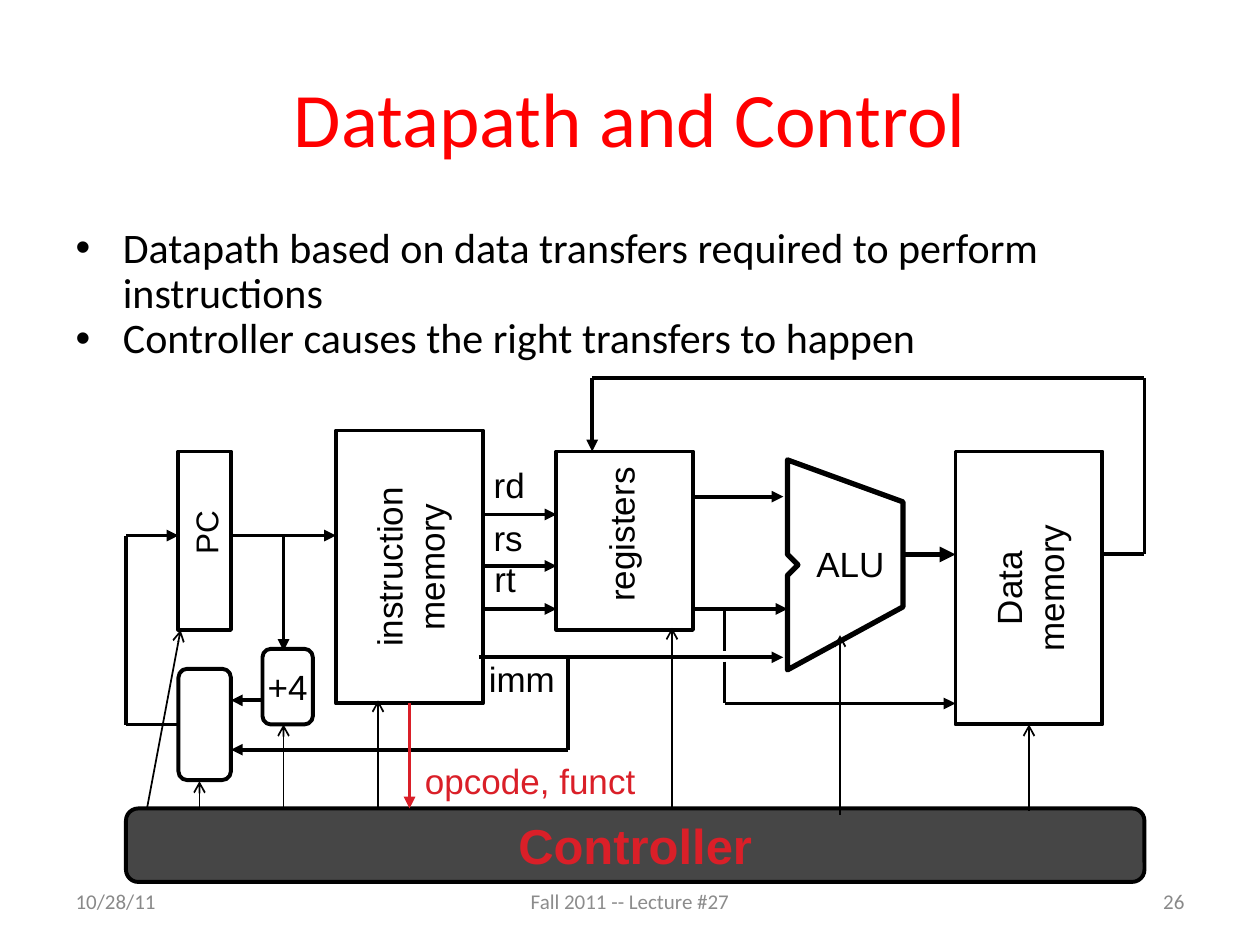
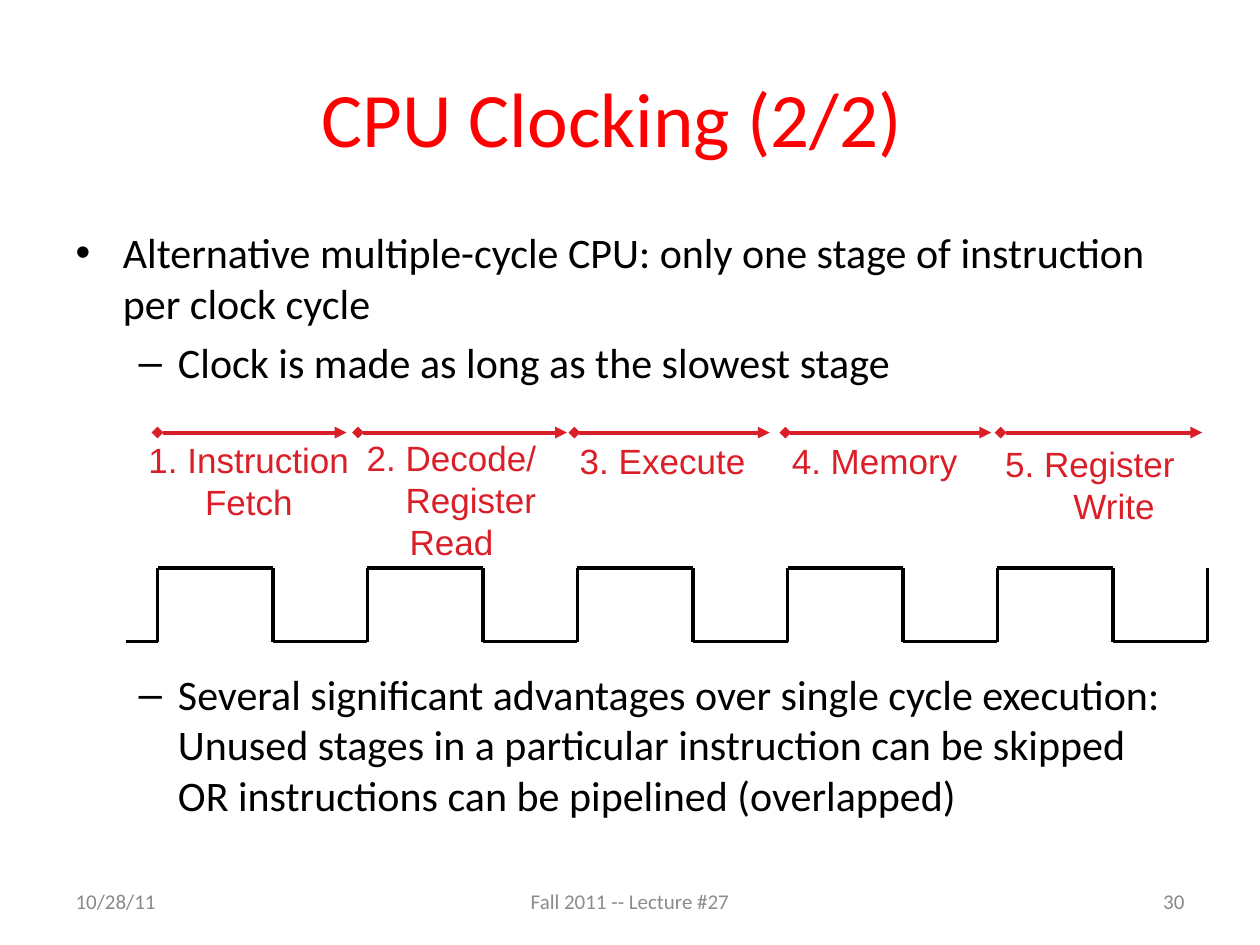
"""Builds two lecture slides: a processor datapath and a multiple-cycle clock."""
from lxml import etree
from pptx import Presentation, util as u
from pptx.dml.color import RGBColor
from pptx.enum import shapes, text
from pptx.oxml import ns

PX = 7620
BLACK, WHITE, RED, TITLE_RED = "000000", "FFFFFF", "DA1F28", "FF0000"
CHARCOAL, GREY, FOOTER_GREY = "464646", "898989", "8C8C8C"
RECT, ROUND = shapes.MSO_SHAPE.RECTANGLE, shapes.MSO_SHAPE.ROUNDED_RECTANGLE
LEFT, CENTER, RIGHT = text.PP_ALIGN.LEFT, text.PP_ALIGN.CENTER, text.PP_ALIGN.RIGHT

LECTURE, DATE = "Fall 2011 -- Lecture #27", "10/28/11"

DATAPATH_POINTS = [
    (0, "Datapath based on data transfers required to perform instructions", 0),
    (0, "Controller causes the right transfers to happen", 0),
]
CLOCKING_POINTS = [
    (0, "Alternative multiple-cycle CPU: only one stage of instruction per clock cycle", 0),
    (1, "Clock is made as long as the slowest stage", 5),
    (1, "Several significant advantages over single cycle execution: Unused stages in a "
        "particular instruction can be skipped OR instructions can be pipelined (overlapped)", 161),
]

UNITS = [
    (RECT, (170, 430, 50, 170), []),
    (RECT, (320, 410, 140, 260), ["instruction", "memory"]),
    (RECT, (530, 430, 130, 170), []),
    (RECT, (910, 430, 140, 260), ["Data", "memory"]),
    (ROUND, (250, 618, 48, 72), ["+4"]),
    (ROUND, (170, 637, 50, 106), []),
]
CONTROLLER = (120, 770, 970, 70)
ALU = [(750, 438), (860, 478), (860, 578), (750, 638), (750, 548), (760, 538), (750, 528)]

UNIT_LABELS = [
    ("rd", (485, 461), (54, 52), BLACK),
    ("rs", (484, 512), (52, 52), BLACK),
    ("rt", (481, 551), (44, 52), BLACK),
    ("imm", (497, 646), (88, 52), BLACK),
    ("ALU", (810, 537), (89, 52), BLACK),
    ("opcode, funct", (505, 743), (224, 52), RED),
]
UPRIGHT_LABELS = [
    ("PC", (196, 507), (48, 66), 18),
    ("registers", (591, 509), (52, 152), 20),
]

ARROW_WIRES = [
    [(220, 510), (320, 510)],
    [(270, 510), (270, 620)],
    [(460, 490), (530, 490)],
    [(460, 539), (530, 539)],
    [(460, 580), (530, 580)],
    [(660, 473), (746, 473)],
    [(660, 580), (750, 580)],
    [(456, 626), (746, 626)],
    [(250, 667), (220, 667)],
    [(541, 626), (541, 714), (220, 714)],
    [(690, 630), (690, 670), (910, 670)],
    [(170, 690), (120, 690), (120, 510), (170, 510)],
    [(1050, 528), (1090, 528), (1090, 360), (564, 360), (564, 430)],
]
ALU_RESULT = [(860, 528), (910, 528)]
STORE_STUB = [(690, 580), (690, 620)]
OPCODE_WIRE = [(390, 670), (390, 770)]
CONTROL_SIGNALS = [
    [(190, 770), (190, 744)],
    [(140, 770), (172, 600)],
    [(270, 770), (270, 690)],
    [(360, 770), (360, 667)],
    [(640, 770), (640, 598)],
    [(800, 776), (800, 605)],
    [(980, 772), (980, 690)],
]

STAGE_Y = 412
STAGES = [
    ((150, 330), (237, 458), ["1. Instruction", "Fetch"], 0),
    ((341, 540), (430, 476), ["2. Decode/", "Register", "Read"], 37),
    ((547, 733), (631, 439), ["3. Execute"], 0),
    ((748, 944), (833, 439), ["4. Memory"], 0),
    ((953, 1145), (1038, 461), ["5. Register", "Write"], 46),
]
CLOCK_START, FIRST_RISE, PERIOD, HIGH_TIME = 120, 150, 200, 110
CLOCK_HIGH, CLOCK_LOW = 541, 611


def px(*lengths):
    """Turn pixel lengths into EMU."""
    return [u.Emu(round(length * PX)) for length in lengths]


def rgb(code):
    """Turn a hex string into a colour."""
    return RGBColor.from_string(code)


def style(paragraph, font, size, color, align, bold=False):
    """Set the look of a whole paragraph."""
    paragraph.alignment = align
    paragraph.font.name, paragraph.font.size = font, u.Pt(size)
    paragraph.font.bold, paragraph.font.color.rgb = bold, rgb(color)


def write(shape, lines, size=20, color=BLACK, font="Arial", align=CENTER,
          bold=False, upright=False, second_indent=0):
    """Fill a shape with vertically centred lines, optionally turned a quarter left."""
    frame = shape.text_frame
    frame.word_wrap, frame.vertical_anchor = True, text.MSO_ANCHOR.MIDDLE
    frame.margin_left = frame.margin_right = frame.margin_top = frame.margin_bottom = 0
    if upright:
        frame._txBody.bodyPr.set("vert", "vert270")
    for index, line in enumerate(lines):
        paragraph = frame.add_paragraph() if index else frame.paragraphs[0]
        paragraph.text = line
        style(paragraph, font, size, color, align, bold)
        if index == 1 and second_indent:
            paragraph._p.get_or_add_pPr().set("marL", str(second_indent * PX))


def label(slide, lines, center, extent, **look):
    """Place a text box around a centre point."""
    (x, y), (width, height) = center, extent
    box = slide.shapes.add_textbox(*px(x - width / 2, y - height / 2, width, height))
    write(box, lines, **look)


def outline(shape, fill, weight=2.25):
    """Give a shape its fill and black border."""
    shape.shadow.inherit = False
    shape.fill.solid()
    shape.fill.fore_color.rgb = rgb(fill)
    shape.line.color.rgb, shape.line.width = rgb(BLACK), u.Pt(weight)


def block(slide, kind, frame, fill=WHITE):
    """Draw one hardware unit."""
    unit = slide.shapes.add_shape(kind, *px(*frame))
    outline(unit, fill)
    return unit


def side_at(units, point):
    """Find the unit and side whose middle lies at a point."""
    for unit in units:
        x, y, w, h = unit.left, unit.top, unit.width, unit.height
        middles = [(x + w // 2, y), (x, y + h // 2), (x + w // 2, y + h), (x + w, y + h // 2)]
        if point in middles:
            return unit, middles.index(point)
    return None


def wire(slide, points, color=BLACK, weight=2.25, tail=None, head=None, units=()):
    """Draw straight lines through the points, with optional end marks."""
    last = len(points) - 2
    for index, (start, end) in enumerate(zip(points, points[1:])):
        begin, finish = px(*start), px(*end)
        line = slide.shapes.add_connector(shapes.MSO_CONNECTOR.STRAIGHT, *begin, *finish)
        line.line.color.rgb, line.line.width = rgb(color), u.Pt(weight)
        for tag, mark, shown in (("a:headEnd", head, index == 0), ("a:tailEnd", tail, index == last)):
            if mark and shown:
                etree.SubElement(line.line._get_or_add_ln(), ns.qn(tag), type=mark)
        etree.SubElement(line._element.spPr, ns.qn("a:effectLst"))
        for point, connect in ((begin, line.begin_connect), (finish, line.end_connect)):
            joint = side_at(units, tuple(point))
            if joint:
                connect(*joint)


def new_slide(deck, title, points, number, title_width=1080, spacing=1.0):
    """Add a slide with its title, list and footer."""
    slide = deck.slides.add_slide(deck.slide_layouts[1])
    heading, body = slide.placeholders
    for holder, frame in ((heading, (60, 36, title_width, 150)), (body, (60, 210, 1080, 594))):
        holder.left, holder.top, holder.width, holder.height = px(*frame)
        holder.text_frame.auto_size = text.MSO_AUTO_SIZE.NONE
    heading.text_frame.text = title
    style(heading.text_frame.paragraphs[0], "Calibri", 44, TITLE_RED, CENTER)
    for index, (level, point, before) in enumerate(points):
        frame = body.text_frame
        paragraph = frame.add_paragraph() if index else frame.paragraphs[0]
        paragraph.text, paragraph.level = point, level
        paragraph.space_before, paragraph.line_spacing = u.Pt(before), spacing
        style(paragraph, "Calibri", 24, BLACK, LEFT)
    footers = [(DATE, GREY, LEFT), (LECTURE, FOOTER_GREY, CENTER), (str(number), GREY, RIGHT)]
    for column, (words, color, align) in enumerate(footers):
        label(slide, [words], (200 + 400 * column, 858), (256, 48),
              size=12, color=color, font="Calibri", align=align)
    return slide


def draw_datapath(slide):
    """Draw the units, the wires between them and the controller."""
    units = []
    for kind, frame, lines in UNITS:
        unit = block(slide, kind, frame)
        if lines:
            write(unit, lines, upright=kind == RECT)
        units.append(unit)
    controller = block(slide, ROUND, CONTROLLER, CHARCOAL)
    write(controller, ["Controller"], size=28, color=RED, bold=True)
    builder = slide.shapes.build_freeform(*ALU[0], scale=PX)
    builder.add_line_segments(ALU[1:], close=True)
    outline(builder.convert_to_shape(), WHITE, 3)

    for points in ARROW_WIRES:
        wire(slide, points, tail="triangle", units=units)
    wire(slide, ALU_RESULT, weight=3, tail="triangle")
    wire(slide, STORE_STUB)
    wire(slide, OPCODE_WIRE, color=RED, tail="triangle", units=units)
    for points in CONTROL_SIGNALS:
        wire(slide, points, weight=1, tail="arrow", units=units)

    for words, center, extent, color in UNIT_LABELS:
        label(slide, [words], center, extent, color=color)
    for words, center, extent, size in UPRIGHT_LABELS:
        label(slide, [words], center, extent, size=size, upright=True)


def draw_clock(slide):
    """Draw the stage spans above the clock wave."""
    for (start, end), center, lines, indent in STAGES:
        wire(slide, [(start, STAGE_Y), (end, STAGE_Y)], RED, tail="triangle", head="diamond")
        label(slide, lines, center, (210, 40 * len(lines) + 12), color=RED, second_indent=indent)
    wave = [(CLOCK_START, CLOCK_LOW)]
    for cycle in range(len(STAGES)):
        rise = FIRST_RISE + PERIOD * cycle
        fall = rise + HIGH_TIME
        wave += [(rise, CLOCK_LOW), (rise, CLOCK_HIGH), (fall, CLOCK_HIGH), (fall, CLOCK_LOW)]
    end = FIRST_RISE + PERIOD * len(STAGES)
    wire(slide, wave + [(end, CLOCK_LOW), (end, CLOCK_HIGH)])


def main():
    """Build and save the deck."""
    deck = Presentation()
    deck.slide_width, deck.slide_height = px(1200, 900)
    draw_datapath(new_slide(deck, "Datapath and Control", DATAPATH_POINTS, 26, spacing=0.9))
    draw_clock(new_slide(deck, "CPU Clocking (2/2)", CLOCKING_POINTS, 30, title_width=1046))
    deck.save("out.pptx")


if __name__ == "__main__":
    main()
